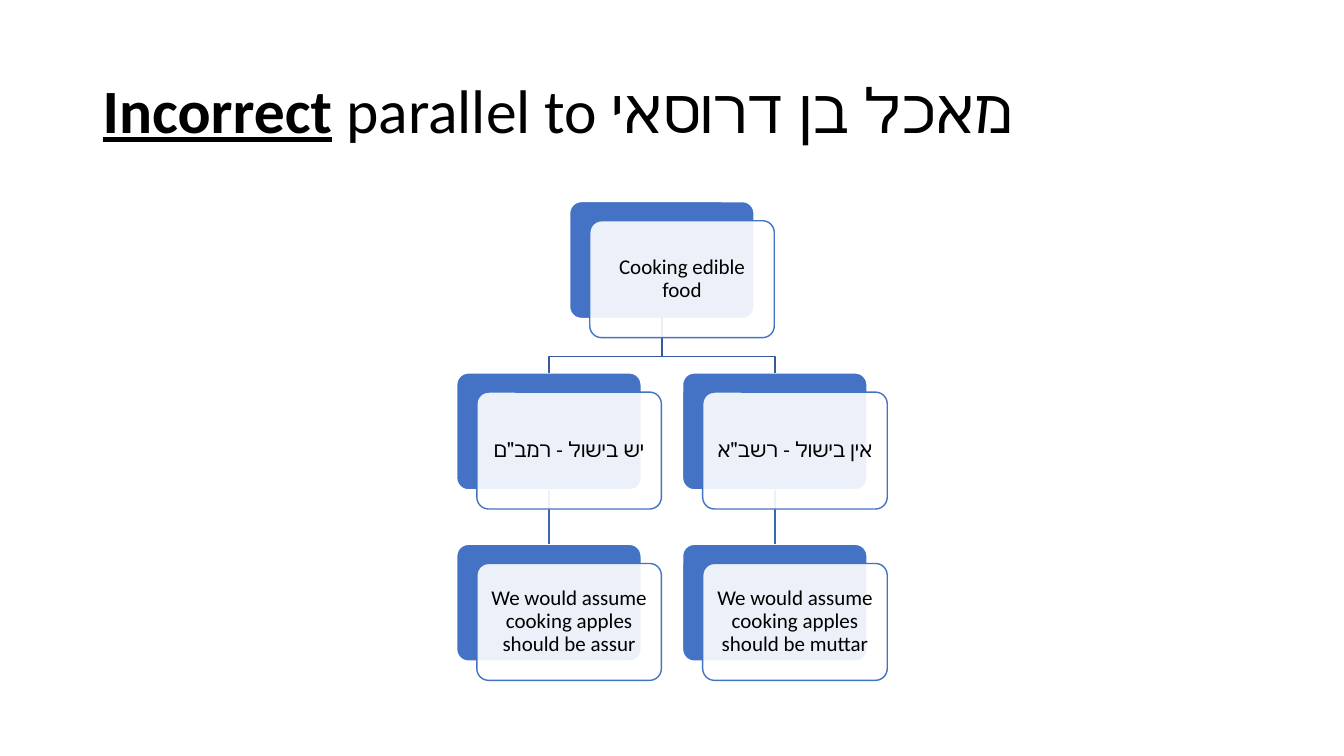
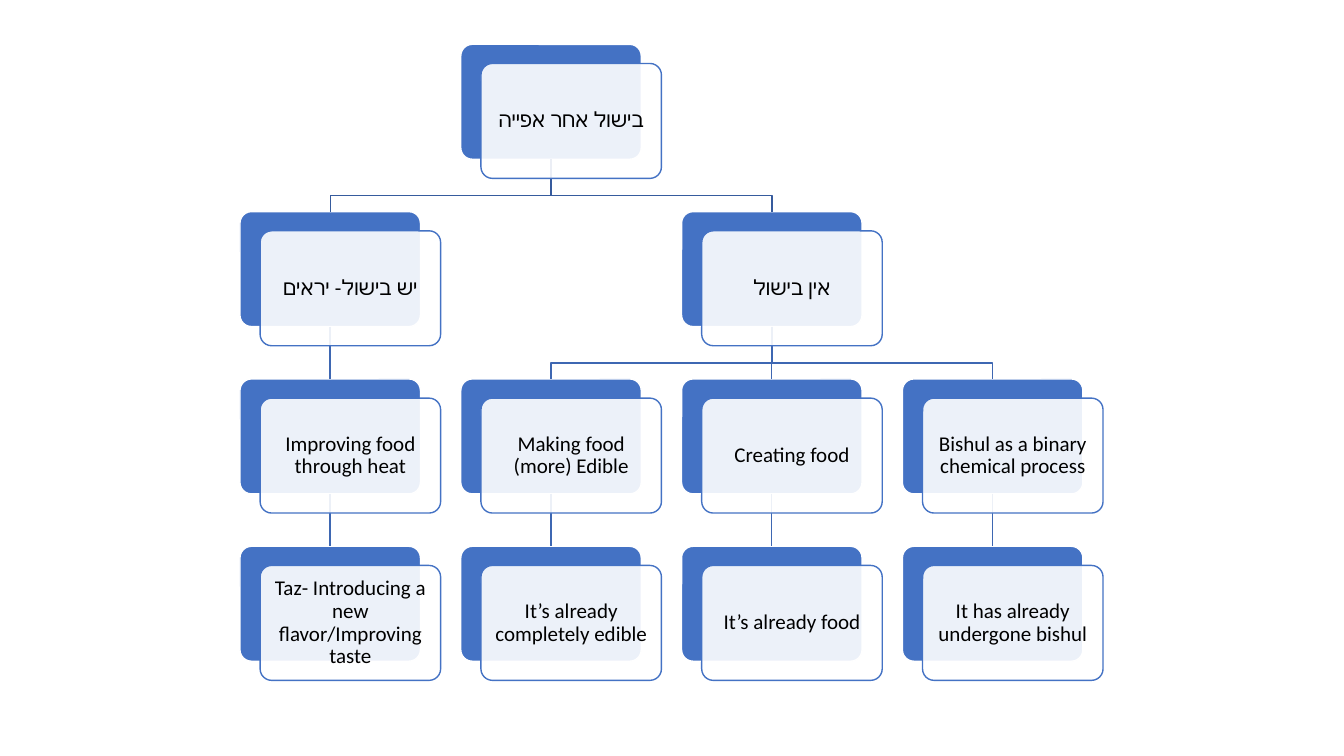
from dataclasses import dataclass

from lxml import etree
from pptx import Presentation
from pptx import util as u
from pptx.dml import color
from pptx.enum import shapes, text
from pptx.oxml import ns

FONT = "Calibri"
BLACK = "000000"
WHITE = "FFFFFF"
BLUE = "4472C4"
ROOT_LINK = "365B9D"
LOWER_LINK = "3E67B2"
LINE_WIDTH = u.Pt(1)
CARD_SHIFT = (0.2, 0.19)
BEND_ABOVE_CHILD = 0.16


@dataclass
class Node:
    label: str
    column: float
    row: int
    parent: int | None = None


@dataclass
class Grid:
    left: float
    top: float
    column_step: float
    row_step: float
    card_width: float
    card_height: float

    def corner(self, node):
        return (self.left + node.column * self.column_step,
                self.top + node.row * self.row_step)


def rgb(value):
    return color.RGBColor.from_string(value)


def add_text(paragraph, content, size=15, bold=False, underline=False,
             align=text.PP_ALIGN.LEFT):
    paragraph.alignment = align
    paragraph.line_spacing = 0.9
    run = paragraph.add_run()
    run.text = content
    run.font.name = FONT
    run.font.size = u.Pt(size)
    run.font.bold = bold
    run.font.underline = underline
    run.font.color.rgb = rgb(BLACK)


def add_title(slide, emphasis, rest):
    box = slide.shapes.add_textbox(u.Inches(0.92), u.Inches(0.4),
                                   u.Inches(11.5), u.Inches(1.45))
    frame = box.text_frame
    frame.word_wrap = True
    frame.vertical_anchor = text.MSO_ANCHOR.MIDDLE
    paragraph = frame.paragraphs[0]
    add_text(paragraph, emphasis, size=44, bold=True, underline=True)
    add_text(paragraph, rest, size=44)


def add_card(slide, left, top, grid, fill, line):
    card = slide.shapes.add_shape(
        shapes.MSO_SHAPE.ROUNDED_RECTANGLE, u.Inches(left), u.Inches(top),
        u.Inches(grid.card_width), u.Inches(grid.card_height))
    card.adjustments[0] = 0.1
    card.shadow.inherit = False
    card.fill.solid()
    card.fill.fore_color.rgb = rgb(fill)
    card.line.color.rgb = rgb(line)
    card.line.width = LINE_WIDTH
    return card


def add_label_card(slide, node, grid):
    left, top = grid.corner(node)
    card = add_card(slide, left + CARD_SHIFT[0], top + CARD_SHIFT[1],
                    grid, WHITE, BLUE)
    fill_color = card.fill._xPr.find(ns.qn("a:solidFill"))[0]
    etree.SubElement(fill_color, ns.qn("a:alpha"), val="90000")
    frame = card.text_frame
    frame.word_wrap = True
    frame.vertical_anchor = text.MSO_ANCHOR.MIDDLE
    frame.margin_left = frame.margin_right = u.Inches(0.06)
    frame.margin_top = frame.margin_bottom = u.Inches(0.06)
    add_text(frame.paragraphs[0], node.label, align=text.PP_ALIGN.CENTER)


def add_straight_link(slide, parent_card, child_card):
    link = slide.shapes.add_connector(shapes.MSO_CONNECTOR.STRAIGHT, 0, 0, 0, 0)
    link.begin_connect(parent_card, 2)
    link.end_connect(child_card, 0)
    etree.SubElement(link._element.spPr, ns.qn("a:effectLst"))
    return link


def add_bent_link(slide, parent_card, child_card):
    start_x = parent_card.left + parent_card.width // 2
    start_y = parent_card.top + parent_card.height
    end_x = child_card.left + child_card.width // 2
    bend_y = child_card.top - u.Inches(BEND_ABOVE_CHILD)
    builder = slide.shapes.build_freeform(start_x, start_y)
    builder.add_line_segments(
        [(start_x, bend_y), (end_x, bend_y), (end_x, child_card.top)],
        close=False)
    link = builder.convert_to_shape()
    link.fill.background()
    link.shadow.inherit = False
    return link


def add_tree(slide, grid, nodes):
    backs = [add_card(slide, *grid.corner(node), grid, BLUE, WHITE)
             for node in nodes]
    for node, back in zip(nodes, backs):
        if node.parent is None:
            continue
        parent = nodes[node.parent]
        aligned = parent.column == node.column
        add_link = add_straight_link if aligned else add_bent_link
        link = add_link(slide, backs[node.parent], back)
        is_root_branch = parent.row == 0
        link.line.color.rgb = rgb(ROOT_LINK if is_root_branch else LOWER_LINK)
        link.line.width = LINE_WIDTH
    for node in nodes:
        add_label_card(slide, node, grid)


def main():
    presentation = Presentation()
    presentation.slide_width = u.Inches(13.33)
    presentation.slide_height = u.Inches(7.5)
    blank = presentation.slide_layouts[6]

    parallel_slide = presentation.slides.add_slide(blank)
    add_title(parallel_slide, "Incorrect", " parallel to מאכל בן דרוסאי")
    add_tree(parallel_slide, Grid(4.53, 2, 2.24, 1.7, 1.83, 1.16), [
        Node("Cooking edible food", 0.5, 0),
        Node("יש בישול - רמב\"ם", 0, 1, 0),
        Node("אין בישול - רשב\"א", 1, 1, 0),
        Node("We would assume cooking apples should be assur", 0, 2, 1),
        Node("We would assume cooking apples should be muttar", 1, 2, 2),
    ])

    baking_slide = presentation.slides.add_slide(blank)
    add_tree(baking_slide, Grid(2.38, 0.44, 2.19, 1.66, 1.79, 1.14), [
        Node("בישול אחר אפייה", 1, 0),
        Node("יש בישול- יראים", 0, 1, 0),
        Node("אין בישול", 2, 1, 0),
        Node("Improving food through heat", 0, 2, 1),
        Node("Making food (more) Edible", 1, 2, 2),
        Node("Creating food", 2, 2, 2),
        Node("Bishul as a binary chemical process", 3, 2, 2),
        Node("Taz- Introducing a new flavor/Improving taste", 0, 3, 3),
        Node("It’s already completely edible", 1, 3, 4),
        Node("It’s already food", 2, 3, 5),
        Node("It has already undergone bishul", 3, 3, 6),
    ])
    presentation.save("out.pptx")


if __name__ == "__main__":
    main()
